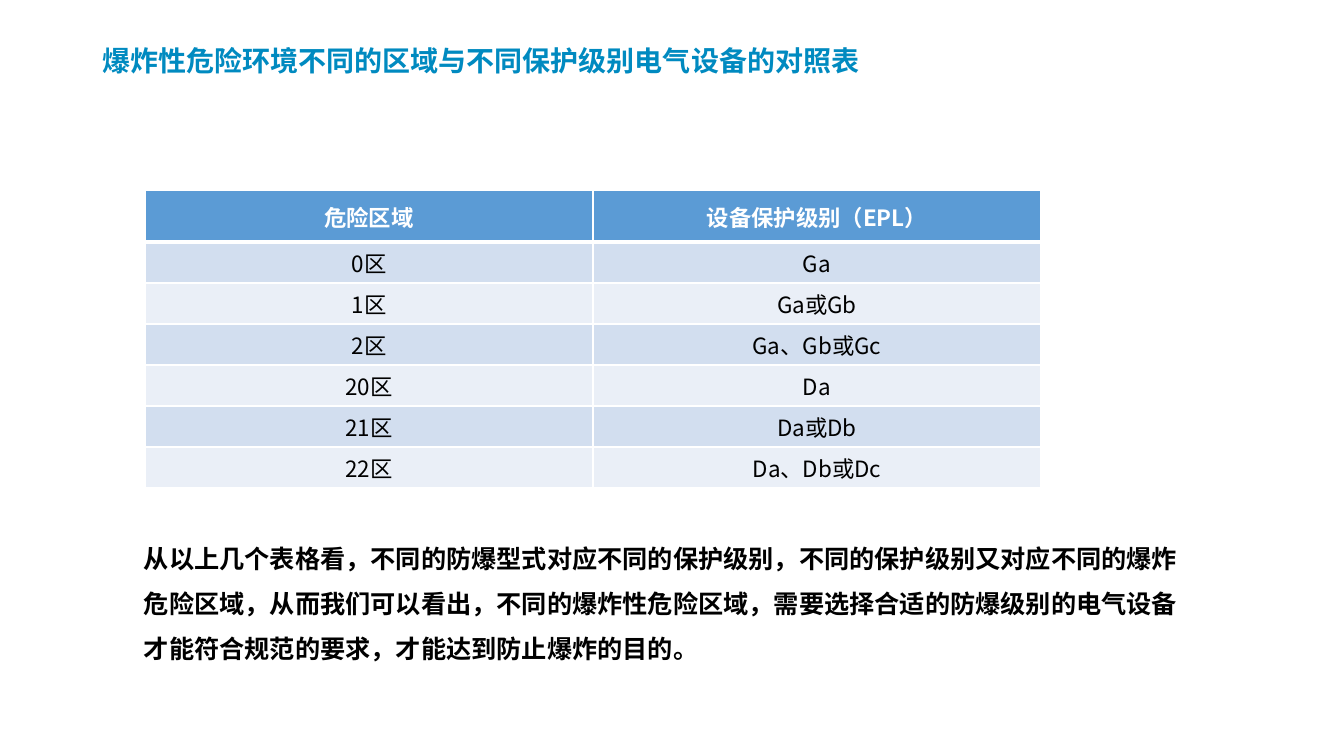
from pptx import Presentation
from pptx.dml.color import RGBColor
from pptx.enum import text
from pptx.oxml import parse_xml
from pptx.oxml import ns

PX = 914400 / 100.8
FONT = "Noto Sans CJK SC"
TITLE = "爆炸性危险环境不同的区域与不同保护级别电气设备的对照表"
ROWS = [
    ("危险区域", "设备保护级别（EPL）"),
    ("0区", "Ga"),
    ("1区", "Ga或Gb"),
    ("2区", "Ga、Gb或Gc"),
    ("20区", "Da"),
    ("21区", "Da或Db"),
    ("22区", "Da、Db或Dc"),
]
CONCLUSION = (
    "从以上几个表格看，不同的防爆型式对应不同的保护级别，"
    "不同的保护级别又对应不同的爆炸危险区域，从而我们可以看出，"
    "不同的爆炸性危险区域，需要选择合适的防爆级别的电气设备"
    "才能符合规范的要求，才能达到防止爆炸的目的。"
)


def px(n):
    return round(n * PX)


def color(value):
    return RGBColor.from_string(value)


def add_run(p, words, size, fill, bold):
    r = p.add_run()
    r.text = words
    r.font.size = text_size(size)
    r.font.bold = bold
    r.font.color.rgb = color(fill)
    r.font.name = FONT
    r.font._element.append(
        parse_xml(f'<a:ea {ns.nsdecls("a")} typeface="{FONT}"/>'))


def text_size(points):
    return points * 12700


def set_borders(cell, bottom):
    """Draw white cell borders, with the bottom one as wide as given in points."""
    tcPr = cell._tc.get_or_add_tcPr()
    widths = {"lnL": 1, "lnR": 1, "lnT": 1, "lnB": bottom}
    for i, (side, width) in enumerate(widths.items()):
        tcPr.insert(i, parse_xml(
            f'<a:{side} {ns.nsdecls("a")} w="{text_size(width)}">'
            f'<a:solidFill><a:srgbClr val="FFFFFF"/></a:solidFill></a:{side}>'))


def format_title(s, x, y, w, h):
    sp = s.shapes.title
    sp.left, sp.top, sp.width, sp.height = map(px, (x, y, w, h))
    tf = sp.text_frame
    tf.word_wrap = True
    tf.auto_size = text.MSO_AUTO_SIZE.NONE
    tf.vertical_anchor = text.MSO_ANCHOR.MIDDLE
    tf.margin_bottom = 0
    p = tf.paragraphs[0]
    p.alignment = text.PP_ALIGN.LEFT
    p.line_spacing = 0.9
    add_run(p, TITLE, 20, "008AC0", True)


def add_zone_table(s, x, y, w, header_h, row_h):
    h = header_h + row_h * (len(ROWS) - 1)
    table = s.shapes.add_table(len(ROWS), 2, *map(px, (x, y, w, h))).table
    for column in table.columns:
        column.width = px(w // 2)
    for i, row in enumerate(ROWS):
        header = i == 0
        table.rows[i].height = px(header_h if header else row_h)
        fill = "5B9BD5" if header else ("EAEFF7", "D2DEEF")[i % 2]
        for cell, words in zip(table.rows[i].cells, row):
            cell.fill.solid()
            cell.fill.fore_color.rgb = color(fill)
            cell.vertical_anchor = text.MSO_ANCHOR.MIDDLE
            cell.margin_left = cell.margin_right = cell.margin_top = px(1)
            cell.margin_bottom = 0
            set_borders(cell, 3 if header else 1)
            p = cell.text_frame.paragraphs[0]
            p.alignment = text.PP_ALIGN.CENTER
            add_run(p, words, 16, "FFFFFF" if header else "000000", header)


def add_conclusion(s, x, y, w, h):
    tf = s.shapes.add_textbox(*map(px, (x, y, w, h))).text_frame
    tf.word_wrap = True
    tf.auto_size = text.MSO_AUTO_SIZE.SHAPE_TO_FIT_TEXT
    p = tf.paragraphs[0]
    p.line_spacing = 1.5
    add_run(p, CONCLUSION, 18, "000000", True)


def main():
    prs = Presentation()
    prs.slide_width, prs.slide_height = px(1344), px(756)
    s = prs.slides.add_slide(prs.slide_layouts[5])
    format_title(s, 92, 37, 835, 45)
    add_zone_table(s, 145, 190, 896, 52, 41)
    add_conclusion(s, 134, 523, 1077, 147)
    prs.save("out.pptx")


if __name__ == "__main__":
    main()
